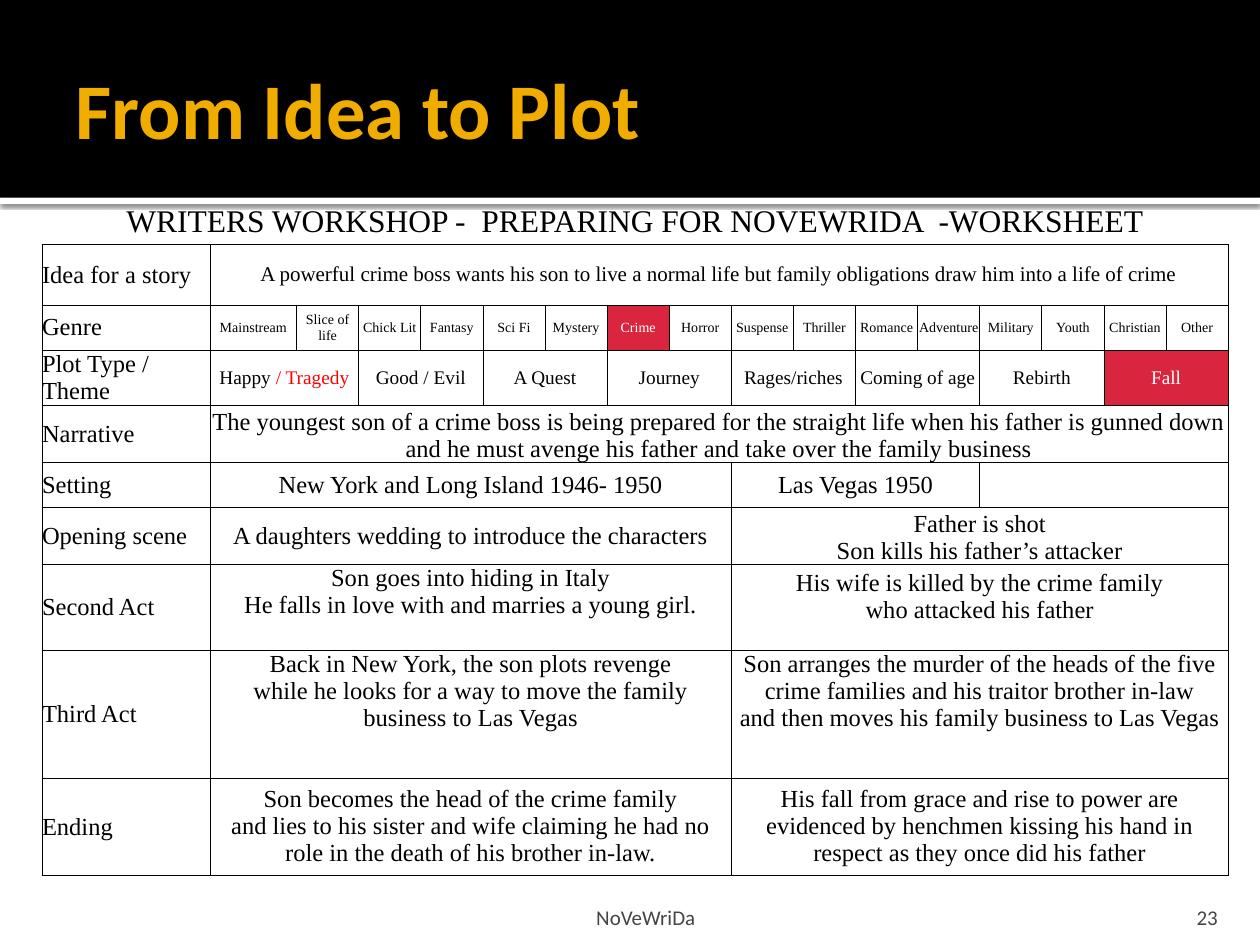
from lxml.etree import SubElement
from pptx import Presentation
from pptx.dml.color import RGBColor
from pptx.enum.shapes import MSO_SHAPE
from pptx.enum.text import MSO_ANCHOR, PP_ALIGN
from pptx.oxml.ns import qn
from pptx.util import Pt

COLORS = {"black": "000000", "white": "FFFFFF", "gold": "F0AD00",
          "red": "FF0000", "crimson": "D9253E", "gray": "454545"}
TOP, MIDDLE, BOTTOM = MSO_ANCHOR.TOP, MSO_ANCHOR.MIDDLE, MSO_ANCHOR.BOTTOM
SERIF, SANS = "Times New Roman", "Calibri"
HEADING = "WRITERS WORKSHOP -  PREPARING FOR NOVEWRIDA  -WORKSHEET"
GENRES = ["Mainstream", "Slice of life", "Chick Lit", "Fantasy", "Sci Fi", "Mystery",
          "Crime", "Horror", "Suspense", "Thriller", "Romance", "Adventure",
          "Military", "Youth", "Christian", "Other"]
PLOTS = ["Happy ", "Good / Evil", "A Quest", "Journey", "Rages/riches",
         "Coming of age", "Rebirth", "Fall"]
CHOSEN = {"Crime", "Fall"}
RED_ENDINGS = {"Happy ": "/ Tragedy"}

# Each row: label, height, text size, cells of (span, text, anchor, bottom margin)
ROWS = [
    ("Idea for a story", 34.5, 12, [
        (16, "A powerful crime boss wants his son to live a normal life but family "
             "obligations draw him into a life of crime", MIDDLE, 0)]),
    ("Genre", 26, 8, [(1, genre, MIDDLE, 0) for genre in GENRES]),
    ("Plot Type / Theme", 31.5, 11, [(2, plot, MIDDLE, 0) for plot in PLOTS]),
    ("Narrative", 32.5, 14, [
        (16, "The youngest son of a crime boss is being prepared for the straight life when "
             "his father is gunned down and he must avenge his father and take over the "
             "family business", BOTTOM, 0)]),
    ("Setting", 26, 14, [
        (8, "New York and Long Island 1946- 1950", MIDDLE, 0),
        (4, "Las Vegas 1950", MIDDLE, 0),
        (4, "", MIDDLE, 0)]),
    ("Opening scene", 32.5, 14, [
        (8, "A daughters wedding to introduce the characters", MIDDLE, 0),
        (8, "Father is shot\nSon kills his father’s attacker", BOTTOM, 0)]),
    ("Second Act", 49, 14, [
        (8, "Son goes into hiding in Italy\n"
            "He falls in love with and marries a young girl.", TOP, 0),
        (8, "His wife is killed by the crime family\nwho attacked his father", BOTTOM, 15)]),
    ("Third Act", 73, 14, [
        (8, "Back in New York, the son plots revenge\n"
            "while he looks for a way to move the family business to Las Vegas", TOP, 0),
        (8, "Son arranges the murder of the heads of the five crime families and his "
            "traitor brother in-law\n"
            "and then moves his family business to Las Vegas", TOP, 0)]),
    ("Ending", 55.5, 14, [
        (8, "Son becomes the head of the crime family\n"
            "and lies to his sister and wife claiming he had no role in the death of his "
            "brother in-law.", BOTTOM, 5),
        (8, "His fall from grace and rise to power are evidenced by henchmen kissing his "
            "hand in respect as they once did his father", BOTTOM, 5)]),
]
ROWS = [row for row in ROWS]
COLUMNS = [96, 49.5] + [35.5] * 15
HEADING_HEIGHT = 26
FOOTERS = [("23", 645.5, 57.5, PP_ALIGN.RIGHT, 7.2),
           ("NaVeWriDa".replace("NaVe", "NoVe"), 36, 666, PP_ALIGN.CENTER, 3.6)]


def rgb(name):
    return RGBColor.from_string(COLORS[name])


def style_text(frame, size, font, color, align, bold=False):
    for paragraph in frame.paragraphs:
        paragraph.alignment = align
        for span in paragraph.runs:
            span.font.size, span.font.name, span.font.bold = Pt(size), font, bold
            span.font.color.rgb = rgb(color)


def set_margins(owner, left, top, right, bottom):
    owner.margin_left, owner.margin_top = Pt(left), Pt(top)
    owner.margin_right, owner.margin_bottom = Pt(right), Pt(bottom)


def add_band(slide, top, height, color):
    band = slide.shapes.add_shape(MSO_SHAPE.RECTANGLE, 0, Pt(top), Pt(720), Pt(height))
    band.shadow.inherit = False
    band.fill.solid()
    band.fill.fore_color.rgb = rgb(color)
    band.line.fill.background()
    return band


def add_drop_shadow(shape):
    effects = shape._element.spPr.find(qn("a:effectLst"))
    shadow = SubElement(effects, qn("a:outerShdw"), blurRad=str(Pt(2.5)),
                        dist=str(Pt(0.8)), dir="5400000", algn="t", rotWithShape="0")
    color = SubElement(shadow, qn("a:srgbClr"), val=COLORS["black"])
    SubElement(color, qn("a:alpha"), val="60000")


def set_borders(cell, sides):
    properties = cell._tc.get_or_add_tcPr()
    for side in "LRTB":
        line = SubElement(properties, qn(f"a:ln{side}"), w=str(Pt(0.5)))
        if side in sides:
            fill = SubElement(line, qn("a:solidFill"))
            SubElement(fill, qn("a:srgbClr"), val=COLORS["black"])
        else:
            SubElement(line, qn("a:noFill"))


def fill_cell(table, row, column, span, text, size, anchor=MIDDLE, bottom=0,
              align=PP_ALIGN.CENTER, sides="LRTB"):
    cell = table.cell(row, column)
    last = column + span - 1
    if span > 1:
        cell.merge(table.cell(row, last))
    set_borders(cell, sides)
    for inner in range(column + 1, last + 1):
        hidden = "L" if inner == last else "LR"
        set_borders(table.cell(row, inner), set(sides) - set(hidden))
    set_margins(cell, 0, 0, 0, bottom)
    cell.vertical_anchor = anchor
    cell.text_frame.text = text
    chosen = text in CHOSEN
    if chosen:
        cell.fill.solid()
        cell.fill.fore_color.rgb = rgb("crimson")
    else:
        cell.fill.background()
    ending = RED_ENDINGS.get(text)
    if ending:
        cell.text_frame.paragraphs[0].add_run().text = ending
    style_text(cell.text_frame, size, SERIF, "white" if chosen else "black", align)
    if ending:
        cell.text_frame.paragraphs[0].runs[-1].font.color.rgb = rgb("red")


def add_worksheet(slide):
    heights = [HEADING_HEIGHT] + [row[1] for row in ROWS]
    table = slide.shapes.add_table(len(heights), len(COLUMNS), Pt(24), Pt(113.75),
                                   Pt(sum(COLUMNS)), Pt(sum(heights))).table
    table.first_row = table.horz_banding = False
    for column, width in zip(table.columns, COLUMNS):
        column.width = Pt(width)
    for row, height in zip(table.rows, heights):
        row.height = Pt(height)
    fill_cell(table, 0, 0, len(COLUMNS), HEADING, 18, sides="B")
    for index, (label, _, size, cells) in enumerate(ROWS, 1):
        fill_cell(table, index, 0, 1, label, 14, align=PP_ALIGN.LEFT)
        column = 1
        for span, text, anchor, bottom in cells:
            fill_cell(table, index, column, span, text, size, anchor, bottom)
            column += span


def add_title(slide):
    title = slide.shapes.title
    title.left, title.top, title.width, title.height = Pt(36), Pt(12), Pt(648), Pt(99)
    frame = title.text_frame
    frame.text = "From Idea to Plot"
    frame.vertical_anchor = MIDDLE
    set_margins(frame, 7.2, 3.6, 3.6, 3.6)
    style_text(frame, 45, SANS, "gold", PP_ALIGN.LEFT, bold=True)
    slide.shapes._spTree.append(title._element)


def add_footer(slide, text, left, width, align, side):
    box = slide.shapes.add_textbox(Pt(left), Pt(510), Pt(width), Pt(21.5))
    frame = box.text_frame
    frame.word_wrap = True
    frame.vertical_anchor = BOTTOM
    set_margins(frame, side, 3.6, side, 0)
    frame.text = text
    style_text(frame, 12, SANS, "gray", align)


def main():
    """Build the plot worksheet slide."""
    deck = Presentation()
    deck.slide_width, deck.slide_height = Pt(720), Pt(540)
    slide = deck.slides.add_slide(deck.slide_layouts[5])
    add_drop_shadow(add_band(slide, 113, 3.6, "white"))
    add_band(slide, 0, 113, "black")
    add_title(slide)
    add_worksheet(slide)
    for footer in FOOTERS:
        add_footer(slide, *footer)
    deck.save("out.pptx")


if __name__ == "__main__":
    main()
